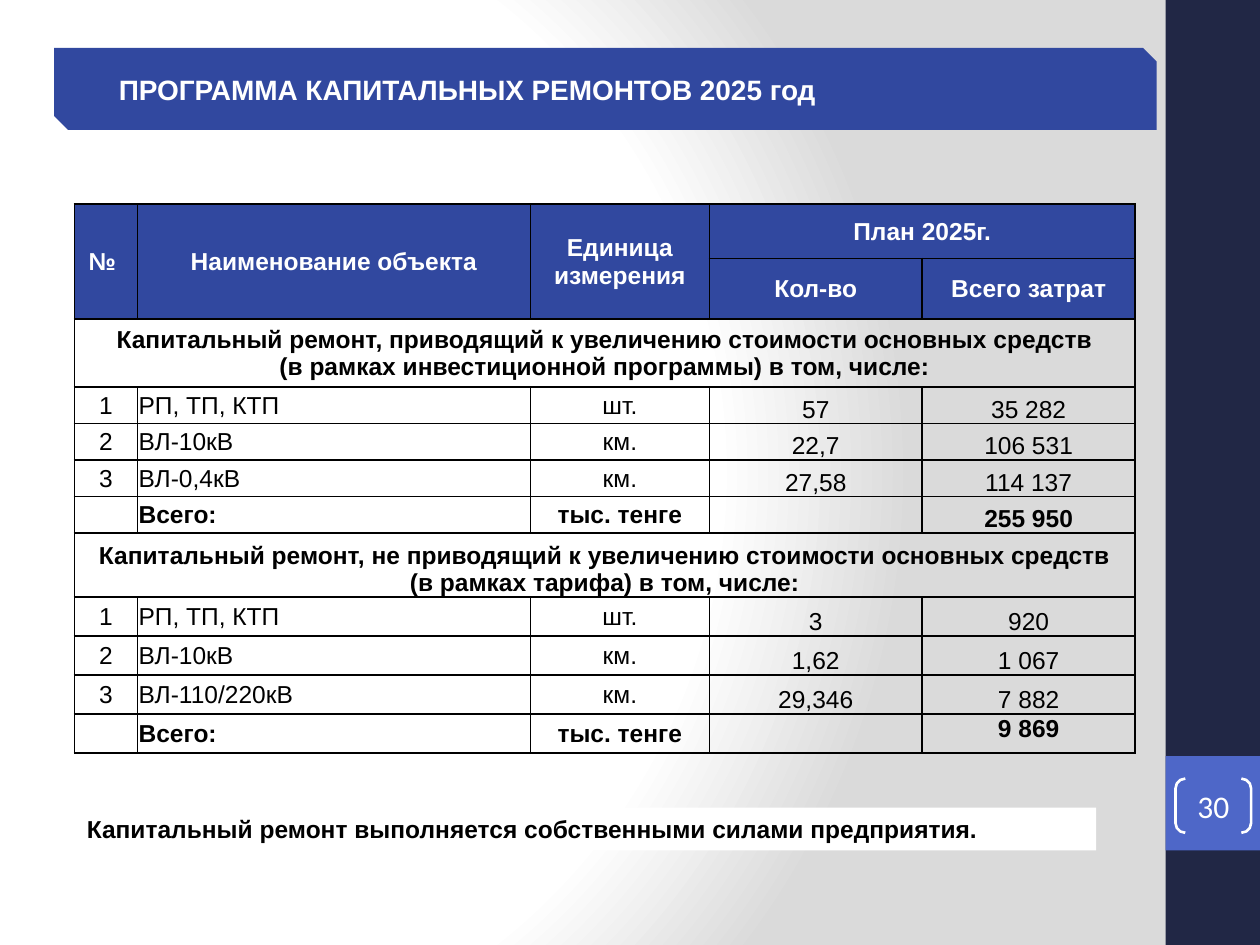
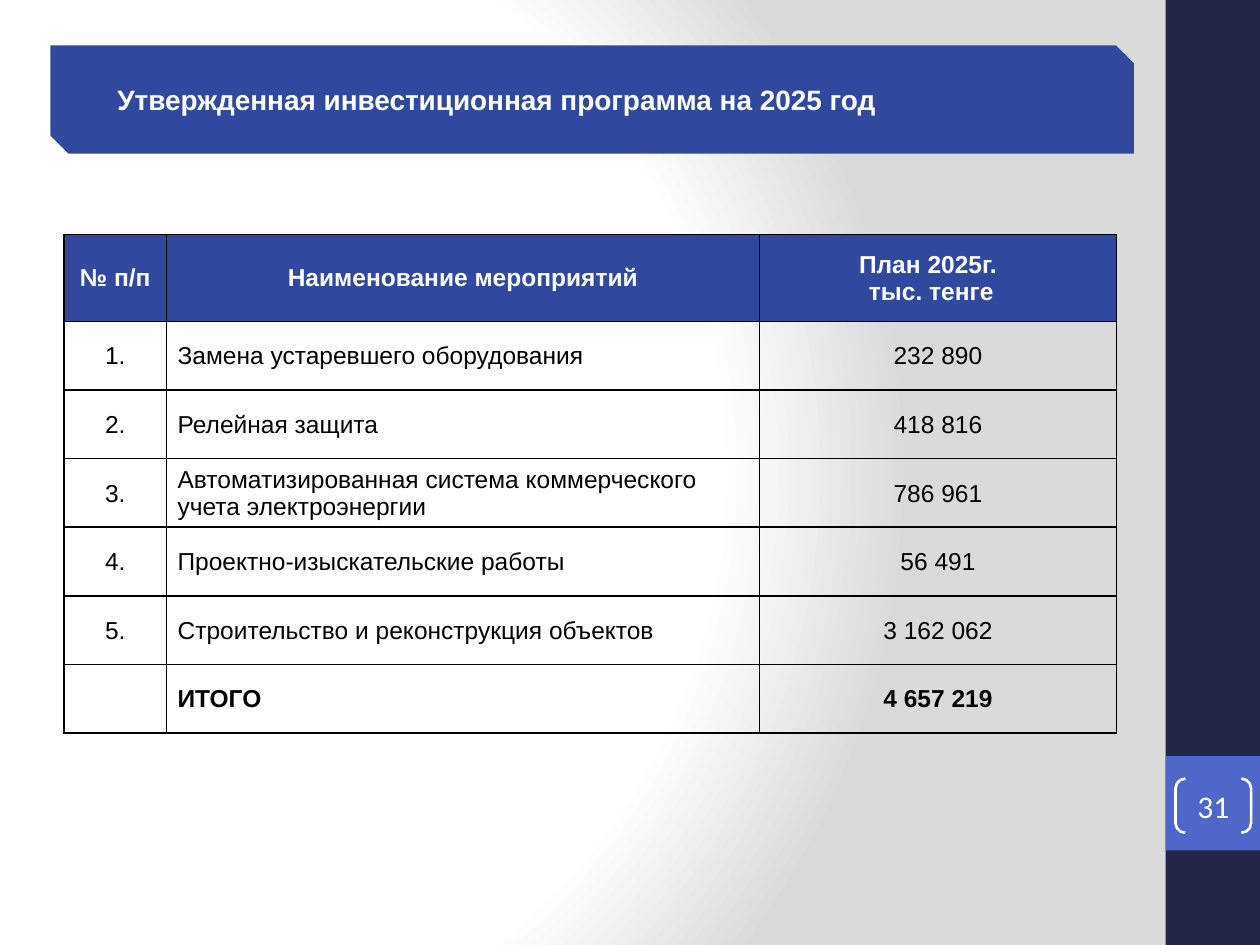
from lxml.etree import SubElement
from pptx import Presentation
from pptx.dml.color import RGBColor
from pptx.enum.shapes import MSO_SHAPE
from pptx.enum.text import MSO_ANCHOR, PP_ALIGN
from pptx.oxml import parse_xml
from pptx.oxml.ns import nsdecls, qn
from pptx.util import Inches, Pt

HUES = {
    "navy": "212745",
    "blue": "31489F",
    "sky": "4E67C8",
    "white": "FFFFFF",
    "gray": "DADADA",
    "black": "000000",
}
MID, LOW, TOP = MSO_ANCHOR.MIDDLE, MSO_ANCHOR.BOTTOM, MSO_ANCHOR.TOP


def hue(name):
    return RGBColor.from_string(HUES[name])


def write(frame, text, size=14, bold=False, color="black", font="Arial",
          align=PP_ALIGN.LEFT, left=0):
    for num, line in enumerate(text.split("\n")):
        para = frame.add_paragraph() if num else frame.paragraphs[0]
        para.alignment = align
        if left:
            para._p.get_or_add_pPr().set("marL", str(Inches(left)))
        if not line:
            para._p.get_or_add_endParaRPr().set("sz", str(size * 100))
            continue
        run = para.add_run()
        run.text = line
        run.font.size = Pt(size)
        run.font.bold = bold
        run.font.name = font
        run.font.color.rgb = hue(color)


def inset(item, left, top, right, low):
    item.margin_left, item.margin_top = Inches(left), Inches(top)
    item.margin_right, item.margin_bottom = Inches(right), Inches(low)


class Deck:
    def __init__(self):
        self.show = Presentation()
        self.show.slide_width = Inches(10)
        self.show.slide_height = Inches(7.5)

    def page(self, num):
        self.slide = self.show.slides.add_slide(self.show.slide_layouts[6])
        self.back()
        self.shape(9.25, 0, 0.75, 7.5, fill="navy")
        self.shape(9.25, 6, 0.75, 0.75, fill="sky")
        mark = self.shape(9.33, 6.18, 0.6, 0.43, MSO_SHAPE.DOUBLE_BRACKET, line="white")
        mark.adjustments[0] = 0.18
        inset(mark.text_frame, 0, 0, 0, 0)
        write(mark.text_frame, str(num), 18, color="white", font="Calibri",
              align=PP_ALIGN.CENTER)

    def back(self):
        stops = "".join(
            f'<a:gs pos="{pos}000"><a:srgbClr val="{HUES[name]}"/></a:gs>'
            for pos, name in ((0, "white"), (75, "white"), (100, "gray")))
        self.slide._element.cSld.insert(0, parse_xml(
            f'<p:bg {nsdecls("p", "a")}><p:bgPr><a:gradFill rotWithShape="1">'
            f'<a:gsLst>{stops}</a:gsLst><a:path path="circle">'
            '<a:fillToRect l="20000" t="50000" r="100000" b="50000"/></a:path>'
            '</a:gradFill><a:effectLst/></p:bgPr></p:bg>'))

    def shape(self, left, top, width, height, kind=MSO_SHAPE.RECTANGLE,
              fill=None, line=None):
        item = self.slide.shapes.add_shape(
            kind, Inches(left), Inches(top), Inches(width), Inches(height))
        item.shadow.inherit = False
        if fill:
            item.fill.solid()
            item.fill.fore_color.rgb = hue(fill)
        else:
            item.fill.background()
        if line:
            item.line.color.rgb = hue(line)
            item.line.width = Pt(1.5)
        else:
            item.line.fill.background()
        item.text_frame.vertical_anchor = MID
        return item

    def title(self, text, *place):
        band = self.shape(*place, MSO_SHAPE.SNIP_2_DIAG_RECTANGLE, fill="blue")
        inset(band.text_frame, 0.07, 0.04, 0.07, 0.04)
        write(band.text_frame, text, 16, True, "white", left=0.39)

    def note(self, text, *place):
        box = self.shape(*place, fill="white")
        box.text_frame.vertical_anchor = TOP
        write(box.text_frame, text, bold=True)

    def edge(self, cell):
        props = cell._tc.get_or_add_tcPr()
        for num, side in enumerate("LRTB"):
            line = SubElement(props, qn(f"a:ln{side}"), w=str(Pt(1)))
            fill = SubElement(line, qn("a:solidFill"))
            SubElement(fill, qn("a:srgbClr"), val=HUES["black"])
            props.insert(num, line)

    def grid(self, left, top, cols, highs, rows, heads=1, pad=0.01, low=9):
        table = self.slide.shapes.add_table(
            len(rows), len(cols), Inches(left), Inches(top),
            Inches(sum(cols)), Inches(sum(highs))).table
        table.first_row = table.horz_banding = False
        for col, width in zip(table.columns, cols):
            col.width = Inches(width)
        for r, row in enumerate(rows):
            table.rows[r].height = Inches(highs[r])
            head, wide = r < heads, len(row) == 1
            if wide:
                table.cell(r, 0).merge(table.cell(r, len(cols) - 1))
            for c in range(len(cols)):
                cell = table.cell(r, c)
                name = c == 1 and not head
                inset(cell, pad if name else 0.01, 0.01, 0.01, 0)
                cell.vertical_anchor = LOW if c >= low and not head else MID
                if head:
                    cell.fill.solid()
                    cell.fill.fore_color.rgb = hue("blue")
                else:
                    cell.fill.background()
                self.edge(cell)
                write(cell.text_frame, row[c] if c < len(row) else "",
                      bold=head or wide or not row[0],
                      color="white" if head else "black",
                      align=PP_ALIGN.LEFT if name else PP_ALIGN.CENTER)
        return table


def repairs(deck):
    deck.page(30)
    deck.title("ПРОГРАММА КАПИТАЛЬНЫХ РЕМОНТОВ 2025 год", 0.43, 0.38, 8.75, 0.65)
    deck.note("Капитальный ремонт выполняется собственными силами предприятия.",
              0.59, 6.41, 8.11, 0.34)
    rows = [
        ["№ ", "Наименование объекта", "Единица измерения", "План 2025г.", ""],
        ["", "", "", "Кол-во", "Всего затрат"],
        ["Капитальный ремонт, приводящий к увеличению стоимости основных средств\n"
         "(в рамках инвестиционной программы) в том, числе:"],
        ["1", "РП, ТП, КТП", "шт.", "57", "35 282"],
        ["2", "ВЛ-10кВ", "км.", "22,7", "106 531"],
        ["3", "ВЛ-0,4кВ", "км.", "27,58", "114 137"],
        ["", "Всего:", "тыс. тенге", "", "255 950"],
        ["Капитальный ремонт, не приводящий к увеличению стоимости основных средств\n"
         "(в рамках тарифа) в том, числе:"],
        ["1", "РП, ТП, КТП", "шт.", "3", "920"],
        ["2", "ВЛ-10кВ", "км.", "1,62", "1 067"],
        ["3", "ВЛ-110/220кВ", "км.", "29,346", "7 882"],
        ["", "Всего:", "тыс. тенге", "", "9 869"],
    ]
    highs = [0.43, 0.48, 0.54] + [0.29] * 4 + [0.51] + [0.31] * 4
    table = deck.grid(0.59, 1.62, [0.5, 3.12, 1.42, 1.69, 1.69], highs, rows,
                      heads=2, low=3)
    for col in range(3):
        table.cell(0, col).merge(table.cell(1, col))
    table.cell(0, 3).merge(table.cell(0, 4))
    table.cell(7, 0).vertical_anchor = LOW
    table.cell(11, 4).vertical_anchor = TOP


def invest(deck):
    deck.page(31)
    deck.title("Утвержденная инвестиционная программа на 2025 год", 0.4, 0.36, 8.6, 0.86)
    works = [
        ("Замена устаревшего оборудования", "232 890"),
        ("Релейная защита", "418 816"),
        ("Автоматизированная система коммерческого учета электроэнергии", "786 961"),
        ("Проектно-изыскательские работы", "56 491"),
        ("Строительство и реконструкция объектов", "3 162 062"),
    ]
    rows = [["№ п/п", "Наименование мероприятий", "План 2025г.\n тыс. тенге"]]
    rows += [[f"{num}.", *work] for num, work in enumerate(works, 1)]
    rows.append(["", "ИТОГО", "4 657 219"])
    table = deck.grid(0.51, 1.86, [0.81, 4.71, 2.83], [0.69] + [0.545] * 6, rows,
                      pad=0.09)
    plan = table.cell(0, 2).text_frame.paragraphs[0]
    plan._p.get_or_add_pPr().set("marR", str(Inches(0.16)))


def main():
    deck = Deck()
    repairs(deck)
    invest(deck)
    deck.show.save("out.pptx")


if __name__ == "__main__":
    main()
